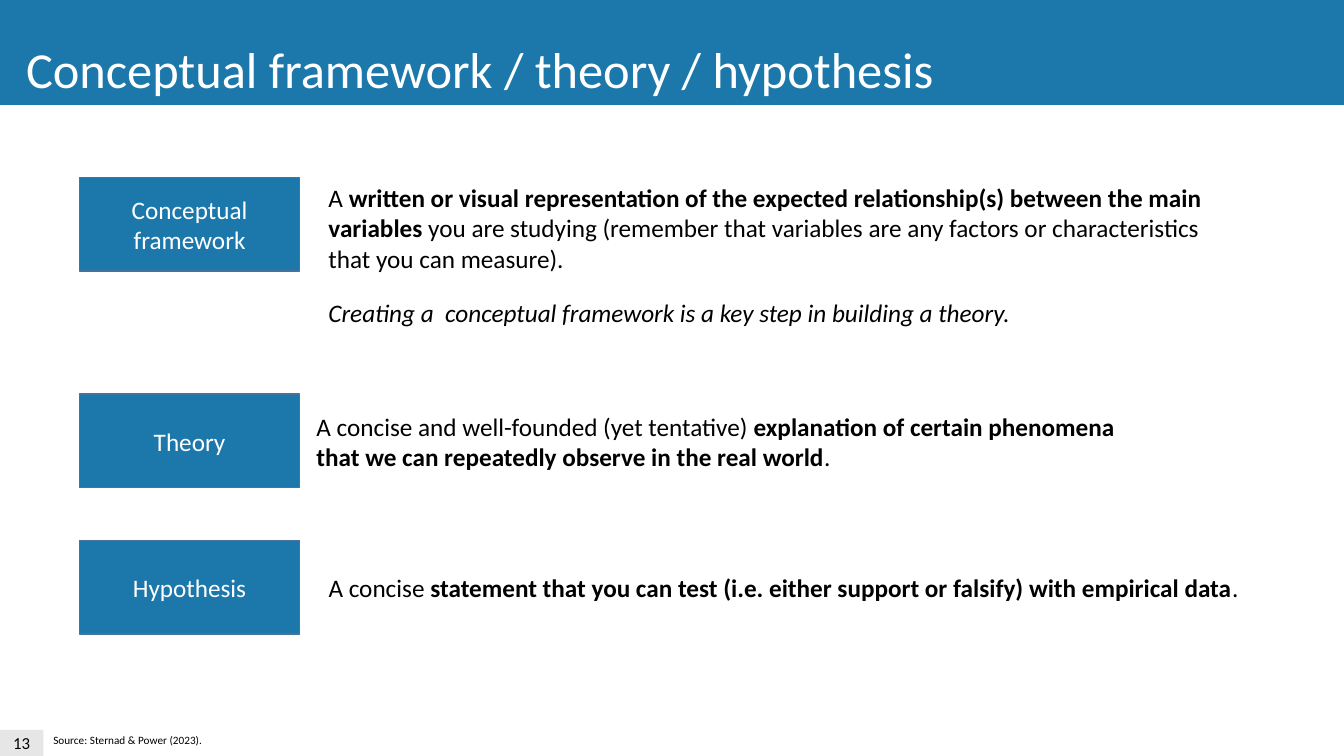
import pptx
import pptx.util
import pptx.dml.color
import pptx.enum.shapes
import pptx.enum.text

Inches = pptx.util.Inches
ANCHOR = pptx.enum.text.MSO_ANCHOR
ALIGN = pptx.enum.text.PP_ALIGN

COLORS = {
    "blue": "1C78AB",
    "outline": "43739E",
    "gray": "E7E6E6",
    "white": "FFFFFF",
    "black": "000000",
}
FONT = "Calibri"
BODY_SIZE = 18

TITLE = "Conceptual framework / theory / hypothesis"
PAGE_NUMBER = "13"
SOURCE = "Source: Sternad & Power (2023)."

TERMS = [
    ("Conceptual framework", 1.76),
    ("Theory", 3.91),
    ("Hypothesis", 5.36),
]
TERM_LEFT, TERM_WIDTH, TERM_HEIGHT = 0.79, 2.18, 0.93

DEFINITIONS = [
    ((3.16, 1.76, 9.2, 1.01), [
        ("A ", ""),
        ("written or visual representation of the expected relationship(s) "
         "between the main variables ", "bold"),
        ("you are studying (remember that variables are any factors or "
         "characteristics that you can measure).", ""),
    ]),
    ((3.16, 2.9, 8.07, 0.4), [
        ("Creating a  conceptual framework is a key step in building a theory.", "italic"),
    ]),
    ((3.04, 4.03, 8.31, 0.71), [
        ("A concise and well-founded (yet tentative) ", ""),
        ("explanation of certain phenomena that we can repeatedly observe "
         "in the real world", "bold"),
        (".", ""),
    ]),
    ((3.16, 5.63, 9.61, 0.4), [
        ("A concise ", ""),
        ("statement that you can test (i.e. either support or falsify) "
         "with empirical data", "bold"),
        (".", ""),
    ]),
]


def rgb(name):
    return pptx.dml.color.RGBColor.from_string(COLORS[name])


def add_runs(paragraph, runs, size, color):
    for text, style in runs:
        run = paragraph.add_run()
        run.text = text
        run.font.name = FONT
        run.font.size = pptx.util.Pt(size)
        run.font.bold = style == "bold"
        run.font.italic = style == "italic"
        run.font.color.rgb = rgb(color)


def add_box(slide, box, fill, text="", size=BODY_SIZE, color="white", outline=None):
    shape = slide.shapes.add_shape(
        pptx.enum.shapes.MSO_SHAPE.RECTANGLE, *map(Inches, box))
    shape.shadow.inherit = False
    shape.fill.solid()
    shape.fill.fore_color.rgb = rgb(fill)
    if outline:
        shape.line.color.rgb = rgb(outline)
        shape.line.width = pptx.util.Pt(1)
    else:
        shape.line.fill.background()
    if text:
        shape.text_frame.word_wrap = True
        shape.text_frame.vertical_anchor = ANCHOR.MIDDLE
        paragraph = shape.text_frame.paragraphs[0]
        paragraph.alignment = ALIGN.CENTER
        add_runs(paragraph, [(text, "")], size, color)


def add_text(slide, box, runs, size=BODY_SIZE, color="black", wrap=True):
    frame = slide.shapes.add_textbox(*map(Inches, box)).text_frame
    frame.word_wrap = wrap
    frame.auto_size = pptx.enum.text.MSO_AUTO_SIZE.SHAPE_TO_FIT_TEXT
    add_runs(frame.paragraphs[0], runs, size, color)


def main():
    presentation = pptx.Presentation()
    presentation.slide_width = Inches(13.33)
    presentation.slide_height = Inches(7.5)
    slide = presentation.slides.add_slide(presentation.slide_layouts[6])

    add_box(slide, (0, 7.24, 0.43, 0.26), "gray", PAGE_NUMBER, 12, "black")
    add_box(slide, (0, -0.01, 13.34, 1.05), "blue")
    add_text(slide, (0.16, 0.33, 9.29, 0.71), [(TITLE, "")], 36, "white", wrap=False)
    for term, top in TERMS:
        add_box(slide, (TERM_LEFT, top, TERM_WIDTH, TERM_HEIGHT), "blue", term,
                outline="outline")
    for box, runs in DEFINITIONS:
        add_text(slide, box, runs)
    add_text(slide, (0.43, 7.23, 1.69, 0.24), [(SOURCE, "")], 8, wrap=False)

    presentation.save("out.pptx")


if __name__ == "__main__":
    main()
